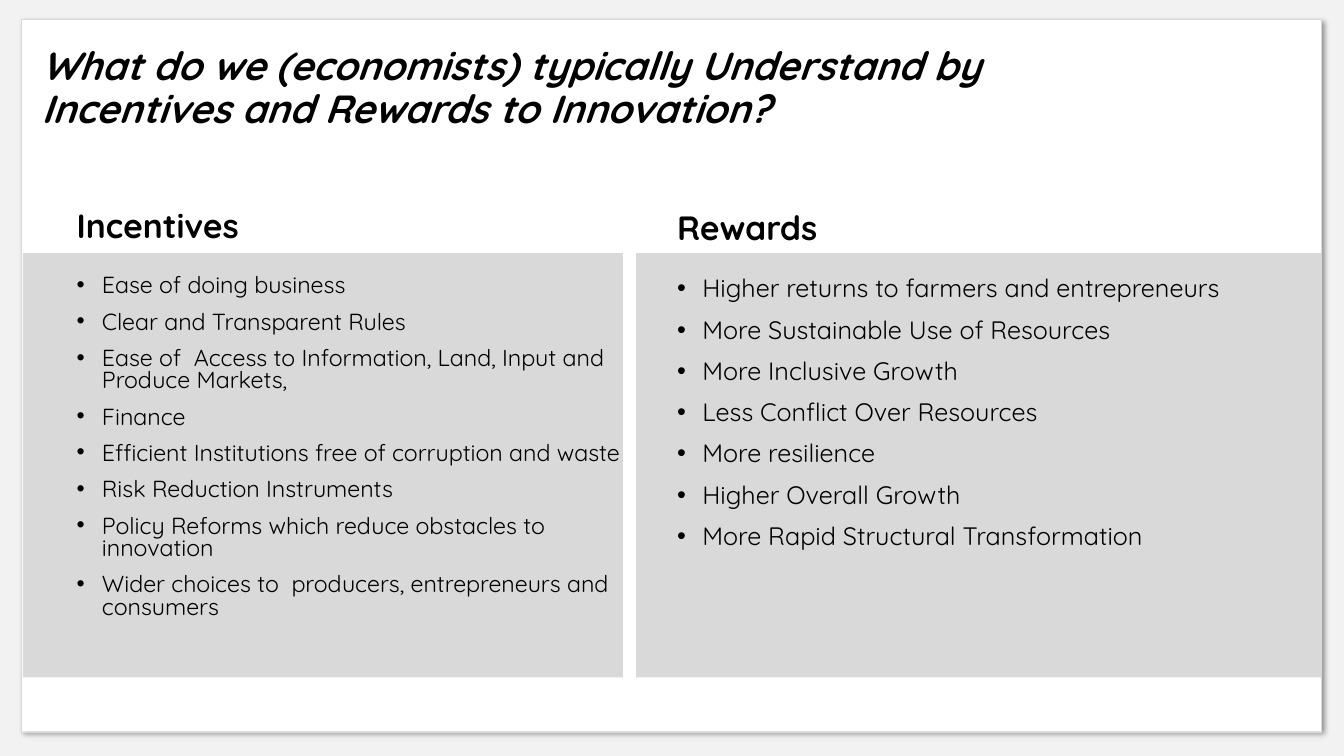
from dataclasses import dataclass

import pptx
import pptx.dml.color
import pptx.enum.shapes
import pptx.enum.text
import pptx.oxml
import pptx.oxml.ns
import pptx.util
from pptx.util import Cm

ANCHOR = pptx.enum.text.MSO_ANCHOR
COMPARISON_LAYOUT = 4


@dataclass(frozen=True)
class Theme:
    font: str = "Quicksand"
    text: str = "000000"
    backdrop: str = "F2F2F2"
    card: str = "FFFFFF"
    card_border: str = "D9D9D9"
    panel: str = "D9D9D9"
    title_size: float = 28
    heading_size: float = 24
    dense_size: float = 16.6
    list_size: float = 18


def rgb(value):
    return pptx.dml.color.RGBColor.from_string(value)


def xml(text):
    return pptx.oxml.parse_xml(text.replace(">", f" {pptx.oxml.ns.nsdecls('a')}>", 1)
                               if not text.split(">", 1)[0].endswith("/")
                               else text.replace("/>", f" {pptx.oxml.ns.nsdecls('a')}/>", 1))


class SlideBuilder:
    """Draws elements from back to front in the order of the calls."""

    def __init__(self, slide, theme):
        self.slide = slide
        self.theme = theme
        slide.background.fill.solid()
        slide.background.fill.fore_color.rgb = rgb(theme.backdrop)

    def rectangle(self, box, fill, border=None, border_width=1):
        shape = self.slide.shapes.add_shape(
            pptx.enum.shapes.MSO_SHAPE.RECTANGLE, *map(Cm, box))
        shape.shadow.inherit = False
        shape.fill.solid()
        shape.fill.fore_color.rgb = rgb(fill)
        if border:
            shape.line.color.rgb = rgb(border)
            shape.line.width = pptx.util.Pt(border_width)
        else:
            shape.line.fill.background()
        return shape

    def card(self, box):
        shape = self.rectangle(box, self.theme.card, self.theme.card_border, 0.25)
        effects = shape.element.spPr.find(pptx.oxml.ns.qn("a:effectLst"))
        effects.append(xml(
            '<a:outerShdw blurRad="50800" dist="38100" dir="2700000" algn="tl">'
            '<a:srgbClr val="000000"><a:alpha val="40000"/></a:srgbClr>'
            '</a:outerShdw>'))

    def placeholder(self, index, box, lines, anchor, spacing, before=0,
                    bulleted=False, **font):
        """Move a placeholder to the front, fill it and format its text."""
        shape = self.slide.placeholders[index]
        shape.element.getparent().append(shape.element)
        shape.left, shape.top, shape.width, shape.height = map(Cm, box)
        frame = shape.text_frame
        frame.text = "\n".join(lines)
        frame_format = {"word_wrap": True, "vertical_anchor": anchor,
                        "auto_size": pptx.enum.text.MSO_AUTO_SIZE.NONE}
        for name, value in frame_format.items():
            setattr(frame, name, value)
        paragraph_format = {"alignment": pptx.enum.text.PP_ALIGN.LEFT,
                            "line_spacing": spacing,
                            "space_before": pptx.util.Pt(before),
                            "space_after": pptx.util.Pt(0)}
        font_format = {"name": self.theme.font, "bold": False, "italic": False} | font
        indent = Cm(0.635) if bulleted else 0
        bullet = '<a:buChar char="•"/>' if bulleted else '<a:buNone/>'
        for paragraph in frame.paragraphs:
            for name, value in paragraph_format.items():
                setattr(paragraph, name, value)
            properties = paragraph._p.get_or_add_pPr()
            properties.set("marL", str(indent))
            properties.set("indent", str(-indent))
            properties.append(xml(bullet))
            for run in paragraph.runs:
                run.font.color.rgb = rgb(self.theme.text)
                for name, value in font_format.items():
                    setattr(run.font, name, value)

    def title(self, box, text):
        self.placeholder(0, box, [text], ANCHOR.MIDDLE, 0.9, bold=True, italic=True,
                         size=pptx.util.Pt(self.theme.title_size))

    def heading(self, index, box, text):
        self.placeholder(index, box, [text], ANCHOR.BOTTOM, 0.9, before=10, bold=True,
                         size=pptx.util.Pt(self.theme.heading_size))

    def bullets(self, index, box, items, size, spacing):
        self.placeholder(index, box, items, ANCHOR.TOP, spacing, before=10,
                         bulleted=True, size=pptx.util.Pt(size))


INCENTIVES = [
    "Ease of doing business",
    "Clear and Transparent Rules",
    "Ease of  Access to Information, Land, Input and Produce Markets,",
    "Finance",
    "Efficient Institutions free of corruption and waste",
    "Risk Reduction Instruments",
    "Policy Reforms which reduce obstacles to innovation",
    "Wider choices to  producers, entrepreneurs and consumers",
]
REWARDS = [
    "Higher returns to farmers and entrepreneurs",
    "More Sustainable Use of Resources",
    "More Inclusive Growth",
    "Less Conflict Over Resources",
    "More resilience",
    "Higher Overall Growth",
    "More Rapid Structural Transformation",
]


def main():
    theme = Theme()
    presentation = pptx.Presentation()
    presentation.slide_width = Cm(33.87)
    presentation.slide_height = Cm(19.05)
    layout = presentation.slide_layouts[COMPARISON_LAYOUT]
    builder = SlideBuilder(presentation.slides.add_slide(layout), theme)

    builder.card((0.53, 0.48, 32.77, 17.96))
    builder.rectangle((0.58, 6.38, 32.72, 10.69), theme.panel)
    builder.title((0.79, 0.41, 29.21, 3.68),
                  "What do we (economists) typically Understand by "
                  "Incentives and Rewards to Innovation?")
    columns = [
        (1, "Incentives", INCENTIVES, 1.68, 4.04, 14.33, theme.dense_size, 0.8),
        (3, "Rewards", REWARDS, 16.81, 4.09, 14.4, theme.list_size, 0.9),
    ]
    for index, heading, items, left, top, width, size, spacing in columns:
        builder.heading(index, (left, top, width, 2.29), heading)
        builder.bullets(index + 1, (left, 6.83, width, 10.24), items, size, spacing)
    builder.rectangle((15.72, 6.32, 0.3, 10.95), theme.card, theme.card)

    presentation.save("out.pptx")


if __name__ == "__main__":
    main()
